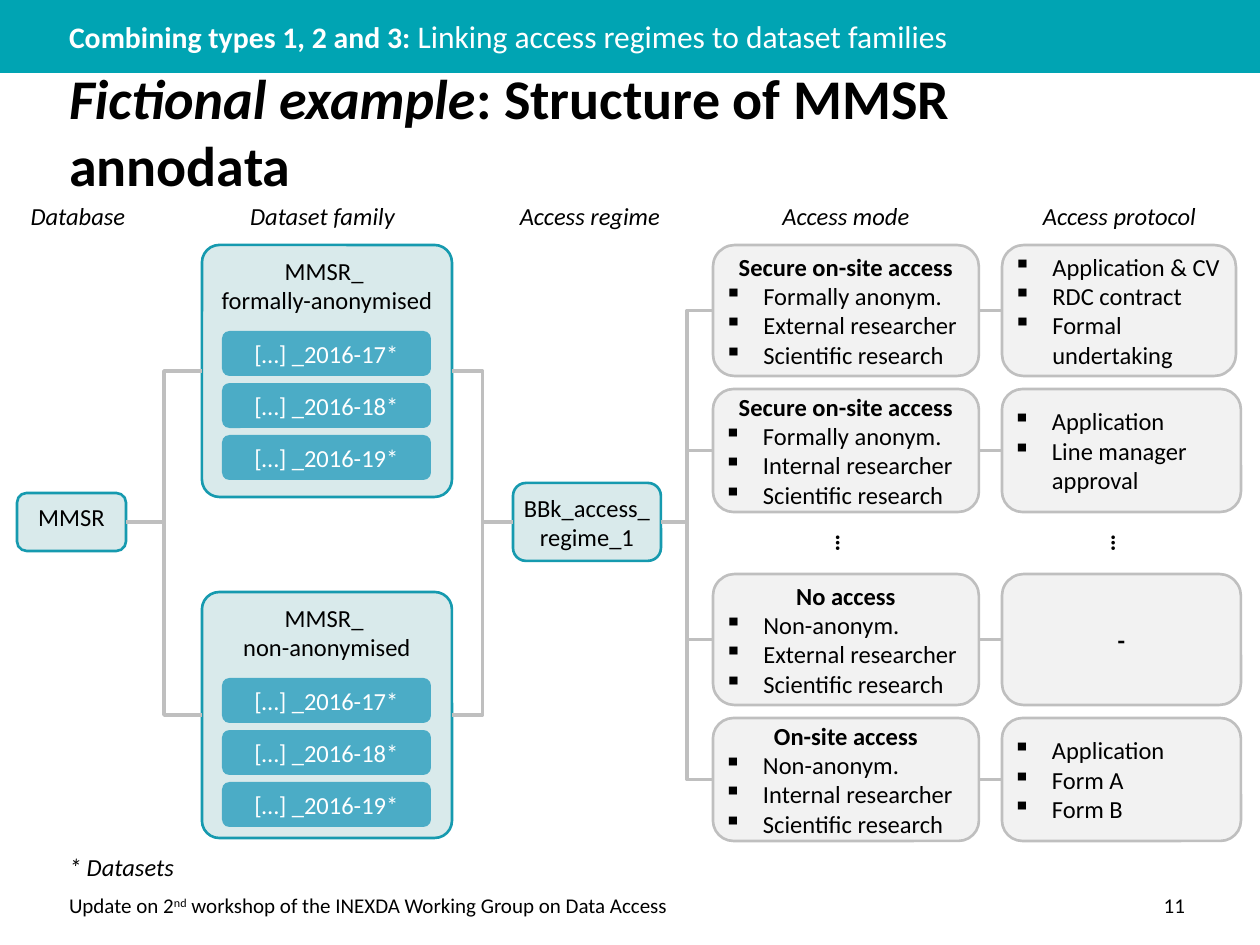
from dataclasses import dataclass

import pptx
import pptx.dml.color
import pptx.enum.shapes
import pptx.enum.text
import pptx.util
from lxml import etree
from pptx.oxml.ns import qn

PX = 914400 // 126  # one scale: 126 px to the inch
COLORS = {
    "banner": "00A4B3", "mint": "D9EAEB", "teal": "169AAF", "dataset": "4BACC6",
    "panel": "F2F2F2", "grey": "BFBFBF", "black": "000000", "white": "FFFFFF",
}
ALIGN = pptx.enum.text.PP_ALIGN
ANCHOR = pptx.enum.text.MSO_ANCHOR
SHAPES = pptx.enum.shapes.MSO_SHAPE
LEFT, RIGHT = 1, 3  # connection sites
HEADING_TOP, SMALL_HEIGHT = 198, 35
MODE_LEFT, MODE_WIDTH, PROTOCOL_LEFT = 713, 266, 1002


@dataclass
class Heading:
    text: str
    left: int
    width: int


@dataclass
class Family:
    name: str
    top: int
    height: int
    corner: float


@dataclass
class Access:
    top: int
    height: int
    mode: str
    conditions: list[str]
    protocol_width: int
    protocol: list[str]


HEADINGS = [
    Heading("Database", 20, 116),
    Heading("Dataset family", 226, 193),
    Heading("Access regime", 508, 164),
    Heading("Access mode", MODE_LEFT, MODE_WIDTH),
    Heading("Access protocol", 1003, 233),
]
FAMILIES = [
    Family("formally-anonymised", 245, 252, 0.07),
    Family("non-anonymised", 592, 246, 0.07),
]
YEARS = ["2016-17", "2016-18", "2016-19"]
FORMAL, NON = "Formally anonym.", "Non-anonym."
EXTERNAL, INTERNAL = "External researcher", "Internal researcher"
SCIENTIFIC = "Scientific research"
ACCESSES = [
    Access(245, 131, "Secure on-site access", [FORMAL, EXTERNAL, SCIENTIFIC],
           234, ["Application & CV", "RDC contract", "Formal undertaking"]),
    Access(389, 123, "Secure on-site access", [FORMAL, INTERNAL, SCIENTIFIC],
           239, ["Application", "Line manager approval"]),
    Access(574, 131, "No access", [NON, EXTERNAL, SCIENTIFIC], 239, []),
    Access(718, 123, "On-site access", [NON, INTERNAL, SCIENTIFIC],
           239, ["Application", "Form A", "Form B"]),
]


def rgb(name: str) -> pptx.dml.color.RGBColor:
    return pptx.dml.color.RGBColor.from_string(COLORS[name])


def place(box, left: int, top: int, width: int, height: int) -> None:
    box.left, box.top, box.width, box.height = (
        n * PX for n in (left, top, width, height))


def write(box, text: str, *, size=14, color="black", bold=False, italic=False,
          align=ALIGN.CENTER, bullet=False, raised=False, same_line=False) -> None:
    """Add a paragraph to the box, or a span to its last paragraph."""
    frame = box.text_frame
    para = frame.paragraphs[-1]
    if para.runs and not same_line:
        para = frame.add_paragraph()
    para.alignment = align
    para.space_before = pptx.util.Pt(0)
    if bullet:
        properties = para._p.get_or_add_pPr()
        properties.set("marL", str(39 * PX))
        properties.set("indent", str(-39 * PX))
        etree.SubElement(properties, qn("a:buChar")).set("char", "▪")
    span = para.add_run()
    span.text = text
    font = span.font
    font.name, font.size = "Calibri", pptx.util.Pt(size)
    font.bold, font.italic = bold, italic
    font.color.rgb = rgb(color)
    if raised:
        span._r.get_or_add_rPr().set("baseline", "30000")


def set_frame(box, anchor, side: int, edge: int) -> None:
    frame = box.text_frame
    frame.word_wrap = True
    frame.auto_size = pptx.enum.text.MSO_AUTO_SIZE.NONE
    frame.vertical_anchor = anchor
    frame.margin_left = frame.margin_right = side * PX
    frame.margin_top = frame.margin_bottom = edge * PX


def add_box(page, left, top, width, height, fill, line=None,
            anchor=ANCHOR.MIDDLE, kind=SHAPES.ROUNDED_RECTANGLE):
    box = page.shapes.add_shape(kind, *(n * PX for n in (left, top, width, height)))
    box.shadow.inherit = False
    box.fill.solid()
    box.fill.fore_color.rgb = rgb(fill)
    if line:
        box.line.color.rgb = rgb(line)
        box.line.width = pptx.util.Pt(1.5)
    else:
        box.line.fill.background()
    set_frame(box, anchor, 5, 6)
    return box


def add_label(page, left, top, width, height, anchor=ANCHOR.MIDDLE, side=5):
    box = page.shapes.add_textbox(*(n * PX for n in (left, top, width, height)))
    set_frame(box, anchor, side, 6)
    return box


def join(page, start, end, kind=pptx.enum.shapes.MSO_CONNECTOR.ELBOW) -> None:
    link = page.shapes.add_connector(kind, 0, 0, 0, 0)
    link.begin_connect(start, RIGHT)
    link.end_connect(end, LEFT)
    link.line.color.rgb = rgb("grey")
    link.line.width = pptx.util.Pt(2)
    etree.SubElement(link._element.spPr, qn("a:effectLst"))


def add_titles(page) -> None:
    add_box(page, 0, 0, 1260, 73, "banner", kind=SHAPES.RECTANGLE)
    title, banner = page.shapes.title, page.placeholders[1]
    # The banner text lies on top of the band
    page.shapes._spTree.append(banner._element)

    place(title, 57, 89, 1140, 84)
    set_frame(title, ANCHOR.MIDDLE, 12, 6)
    title.text_frame.margin_right = 40 * PX
    style = dict(size=32, bold=True, align=ALIGN.LEFT)
    write(title, "Fictional example", italic=True, **style)
    write(title, ": Structure of MMSR annodata", same_line=True, **style)

    place(banner, 57, 8, 1032, 55)
    set_frame(banner, ANCHOR.MIDDLE, 12, 6)
    properties = banner.text_frame.paragraphs[0]._p.get_or_add_pPr()
    properties.set("marL", "0")
    properties.set("indent", "0")
    etree.SubElement(properties, qn("a:buNone"))
    style = dict(color="white", align=ALIGN.LEFT)
    write(banner, "Combining types 1, 2 and 3: ", size=17, bold=True, **style)
    write(banner, "Linking access regimes to dataset families",
          size=18, same_line=True, **style)


def add_family(page, family: Family):
    box = add_box(page, 202, family.top, 250, family.height, "mint", "teal", ANCHOR.TOP)
    box.adjustments[0] = family.corner
    write(box, "MMSR_ ")
    write(box, family.name)
    for row, year in enumerate(YEARS):
        dataset = add_box(page, 222, family.top + 86 + 52 * row, 209, 45, "dataset")
        write(dataset, f"[…] _{year}*", color="white")
    return box


def add_access(page, access: Access, regime) -> None:
    mode = add_box(page, MODE_LEFT, access.top, MODE_WIDTH, access.height,
                   "panel", "grey")
    write(mode, access.mode, bold=True)
    protocol = add_box(page, PROTOCOL_LEFT, access.top, access.protocol_width,
                       access.height, "panel", "grey")
    for box, items in ((mode, access.conditions), (protocol, access.protocol)):
        for item in items:
            write(box, item, align=ALIGN.LEFT, bullet=True)
    if not access.protocol:
        write(protocol, "-", bold=True)
    join(page, regime, mode)
    join(page, mode, protocol, pptx.enum.shapes.MSO_CONNECTOR.STRAIGHT)


def add_footer(page) -> None:
    note = add_label(page, 57, 846, 1014, 39, ANCHOR.TOP, 12)
    write(note, "* Datasets", italic=True, align=ALIGN.LEFT)
    footer = add_label(page, 57, 887, 1014, 39, ANCHOR.TOP, 12)
    style = dict(size=12, align=ALIGN.LEFT)
    write(footer, "Update on 2", **style)
    write(footer, "nd", raised=True, same_line=True, **style)
    write(footer, " workshop of the INEXDA Working Group on Data Access",
          same_line=True, **style)
    number = add_label(page, 1089, 887, 108, 39, ANCHOR.TOP, 12)
    write(number, "11", size=12, align=ALIGN.RIGHT)


def main() -> None:
    deck = pptx.Presentation()
    deck.slide_width, deck.slide_height = pptx.util.Inches(10), pptx.util.Inches(7.5)
    page = deck.slides.add_slide(deck.slide_layouts[1])
    add_titles(page)

    # Column headings
    for heading in HEADINGS:
        label = add_label(page, heading.left, HEADING_TOP, heading.width, SMALL_HEIGHT)
        write(label, heading.text, italic=True)

    # Database, dataset families and access regime
    database = add_box(page, 17, 493, 109, 58, "mint", "teal", ANCHOR.TOP)
    write(database, "MMSR")
    regime = add_box(page, 513, 483, 148, 78, "mint", "teal", ANCHOR.TOP)
    write(regime, "BBk_access_regime_1")
    for family in FAMILIES:
        box = add_family(page, family)
        join(page, database, box)
        join(page, box, regime)

    # Access modes with their protocols
    for access in ACCESSES:
        add_access(page, access, regime)
    for left, width in ((MODE_LEFT, MODE_WIDTH), (PROTOCOL_LEFT, 239)):
        dots = add_label(page, left, 526, width, SMALL_HEIGHT)
        dots.text_frame._txBody.bodyPr.set("vert", "vert")
        write(dots, "…", bold=True)

    add_footer(page)
    deck.save("out.pptx")


if __name__ == "__main__":
    main()
